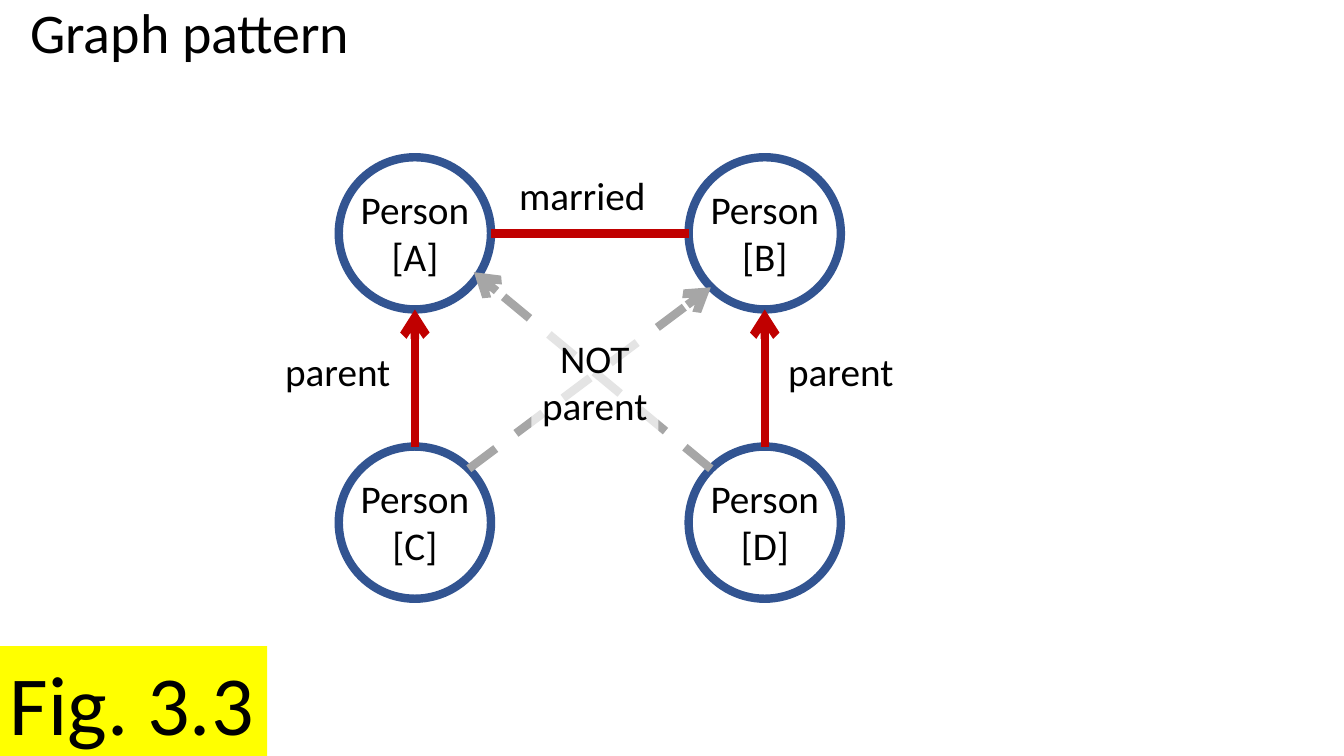
"""Build a slide showing a graph pattern of four persons and their relations."""
from lxml import etree
from pptx import Presentation
from pptx.dml.color import RGBColor
from pptx.enum.dml import MSO_LINE
from pptx.enum.shapes import MSO_CONNECTOR, MSO_SHAPE
from pptx.enum.text import MSO_ANCHOR, PP_ALIGN
from pptx.oxml.ns import qn
from pptx.util import Inches, Pt

STRAIGHT = MSO_CONNECTOR.STRAIGHT
OVAL, RECTANGLE = MSO_SHAPE.OVAL, MSO_SHAPE.RECTANGLE
DASH = MSO_LINE.DASH
TOP = MSO_ANCHOR.TOP
LEFT, CENTER = PP_ALIGN.LEFT, PP_ALIGN.CENTER

BLACK = RGBColor(0x00, 0x00, 0x00)
WHITE = RGBColor(0xFF, 0xFF, 0xFF)
BLUE = RGBColor(0x32, 0x54, 0x91)
RED = RGBColor(0xC0, 0x00, 0x00)
GRAY = RGBColor(0xA6, 0xA6, 0xA6)
YELLOW = RGBColor(0xFF, 0xFF, 0x00)

TITLE = "Graph pattern"
FIGURE_LABEL = "Fig. 3.3"
PERSONS = [["A", "B"], ["C", "D"]]
RELATION_LABELS = [
    ("married", (5.04, 1.65, 1.47, 0.57)),
    ("parent", (7.71, 3.4, 1.26, 0.57)),
    ("parent", (2.72, 3.4, 1.26, 0.57)),
]
NOT_PARENT = "NOT\vparent"
NOT_PARENT_BOX = (5.27, 3.27, 1.26, 1.04)
FIGURE_BOX = (0, 6.41, 2.65, 1.11)
TITLE_BOX = (0.2, 0, 12.85, 1.44)

DIAMETER = 1.51
RADIUS = DIAMETER / 2
COLUMNS = (3.36, 6.83)
ROWS = (1.56, 4.43)
LABEL_INSET = (0.11, 0.23)
LABEL_SIZE = (1.29, 1.04)
LINE_WIDTH = Pt(6)


def write_text(shape, text, size=28, align=CENTER, wrap=False):
    """Put formatted text at the top of a shape."""
    frame = shape.text_frame
    frame.word_wrap = wrap
    frame.vertical_anchor = TOP
    frame.text = text
    paragraph = frame.paragraphs[0]
    paragraph.alignment = align
    for run in paragraph.runs:
        run.font.size = Pt(size)
        run.font.name = "Calibri"
        run.font.color.rgb = BLACK
    return paragraph


def add_filled_shape(shapes, kind, box, color):
    """Add a flat filled shape without outline."""
    shape = shapes.add_shape(kind, *map(Inches, box))
    shape.shadow.inherit = False
    shape.fill.solid()
    shape.fill.fore_color.rgb = color
    shape.line.fill.background()
    return shape


def add_person(shapes, name, left, top):
    """Add a group of a circle and its label."""
    group = shapes.add_group_shape()
    circle = add_filled_shape(group.shapes, OVAL, (left, top, DIAMETER, DIAMETER), WHITE)
    circle.line.color.rgb = BLUE
    circle.line.width = LINE_WIDTH
    box = (left + LABEL_INSET[0], top + LABEL_INSET[1], *LABEL_SIZE)
    label = group.shapes.add_textbox(*map(Inches, box))
    write_text(label, f"Person\v[{name}]")


def add_relation(shapes, start, end, color=RED, arrow=True, dashed=False):
    """Draw a relation line between two points."""
    connector = shapes.add_connector(STRAIGHT, *map(Inches, (*start, *end)))
    connector.line.color.rgb = color
    connector.line.width = LINE_WIDTH
    if dashed:
        connector.line.dash_style = DASH
    if arrow:
        etree.SubElement(connector.line._get_or_add_ln(), qn("a:tailEnd"), type="arrow")
    etree.SubElement(connector._element.spPr, qn("a:effectLst"))


def main():
    """Compose and save the slide."""
    presentation = Presentation()
    presentation.slide_width = Inches(13.33)
    presentation.slide_height = Inches(7.5)
    slide = presentation.slides.add_slide(presentation.slide_layouts[5])
    shapes = slide.shapes

    title = shapes.title
    title.left, title.top, title.width, title.height = map(Inches, TITLE_BOX)
    write_text(title, TITLE, size=40, align=LEFT, wrap=True).line_spacing = 0.9

    for names, top in zip(PERSONS, ROWS):
        for name, left in zip(names, COLUMNS):
            add_person(shapes, name, left, top)

    middle = ROWS[0] + RADIUS
    add_relation(shapes, (COLUMNS[0] + DIAMETER, middle), (COLUMNS[1], middle), arrow=False)
    for left in COLUMNS:
        center = left + RADIUS
        add_relation(shapes, (center, ROWS[1]), (center, ROWS[0] + DIAMETER))
    for start, end in [((7.05, 4.65), (4.7, 2.7)), ((4.65, 4.65), (7.05, 2.85))]:
        add_relation(shapes, start, end, color=GRAY, dashed=True)

    for text, box in RELATION_LABELS:
        write_text(shapes.add_textbox(*map(Inches, box)), text)

    not_parent = add_filled_shape(shapes, RECTANGLE, NOT_PARENT_BOX, WHITE)
    white = not_parent._element.spPr.find(qn("a:solidFill"))[0]
    etree.SubElement(white, qn("a:alpha"), val="70000")
    write_text(not_parent, NOT_PARENT)

    figure = add_filled_shape(shapes, RECTANGLE, FIGURE_BOX, YELLOW)
    write_text(figure, FIGURE_LABEL, size=60, align=LEFT)

    presentation.save("out.pptx")


if __name__ == "__main__":
    main()
